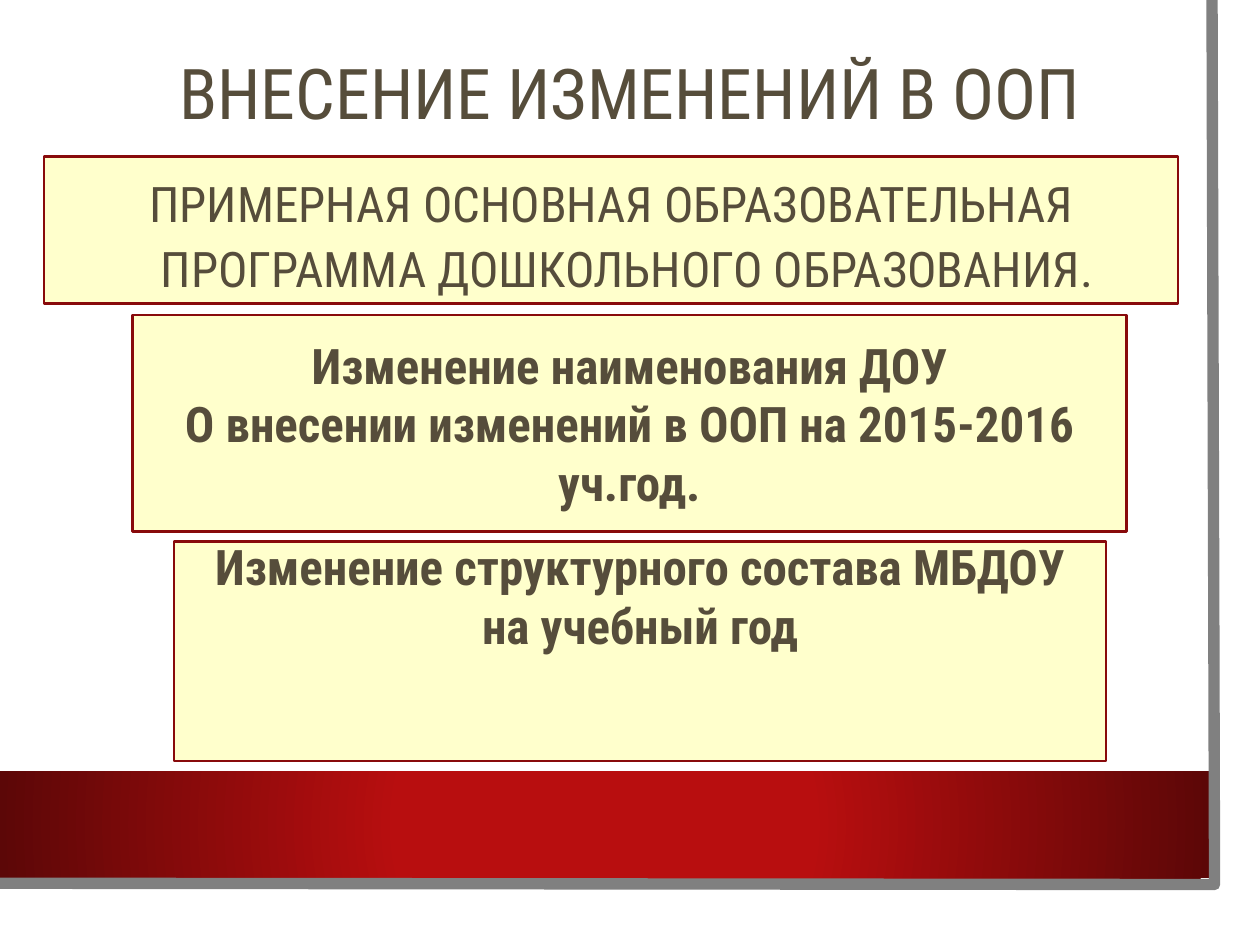
from lxml import etree
from pptx import Presentation
from pptx.dml.color import RGBColor
from pptx.enum.shapes import MSO_SHAPE
from pptx.enum.text import MSO_ANCHOR, PP_ALIGN
from pptx.oxml import parse_xml
from pptx.oxml.ns import nsdecls, qn
from pptx.util import Inches, Pt

RECTANGLE = MSO_SHAPE.RECTANGLE
MIDDLE, TOP = MSO_ANCHOR.MIDDLE, MSO_ANCHOR.TOP
CENTER = PP_ALIGN.CENTER

FONT = "Roboto Condensed"
WHITE = RGBColor(0xFF, 0xFF, 0xFF)
GRAY = RGBColor(0x80, 0x80, 0x80)
BROWN = RGBColor(0x56, 0x4D, 0x3B)
CREAM = RGBColor(0xFF, 0xFF, 0xCC)
DARK_RED = RGBColor(0x88, 0x0A, 0x0B)
BAND_STOPS = [(34, RGBColor(0xB8, 0x0E, 0x0F)), (100, RGBColor(0x5C, 0x07, 0x07))]

SHEET = (0, 0, 9.83, 7.27)
BAND = (0, 6.12, 9.6, 0.85)
EDGE = [(9.62, 0), (9.64, 7.02), (-0.02, 7.01)]

TITLE = {"box": (0.5, 0.29, 9, 0.95), "text": "ВНЕСЕНИЕ ИЗМЕНЕНИЙ В ООП",
         "size": 40, "spacing": 0.9}
PANELS = [
    {"box": (0.35, 1.24, 9, 1.17), "spacing": 1.1, "hanging": 0.25, "top": 0.09,
     "text": "ПРИМЕРНАЯ ОСНОВНАЯ ОБРАЗОВАТЕЛЬНАЯ ПРОГРАММА ДОШКОЛЬНОГО ОБРАЗОВАНИЯ."},
    {"box": (1.05, 2.5, 7.89, 1.72), "bold": True,
     "text": "Изменение наименования ДОУ\nО внесении изменений в ООП на 2015-2016 уч.год."},
    {"box": (1.38, 4.3, 7.4, 1.74), "bold": True, "anchor": TOP, "top": -0.04,
     "text": "Изменение структурного состава МБДОУ на учебный год"},
]


def add_rectangle(slide, box, fill=None, line=None):
    shape = slide.shapes.add_shape(RECTANGLE, *map(Inches, box))
    shape.shadow.inherit = False
    if fill is not None:
        shape.fill.solid()
        shape.fill.fore_color.rgb = fill
    if line is None:
        shape.line.fill.background()
    else:
        shape.line.color.rgb = line
        shape.line.width = Pt(1.5)
    return shape


def set_radial_fill(shape, stops):
    shape.fill.background()
    gradient = parse_xml(
        f'<a:gradFill {nsdecls("a")} rotWithShape="1"><a:gsLst/><a:path path="circle">'
        '<a:fillToRect l="50000" t="50000" r="50000" b="50000"/></a:path></a:gradFill>')
    for position, color in stops:
        stop = etree.SubElement(gradient[0], qn("a:gs"), pos=str(position * 1000))
        etree.SubElement(stop, qn("a:srgbClr"), val=str(color))
    properties = shape.element.spPr
    properties.replace(properties.find(qn("a:noFill")), gradient)


def add_edge(slide, points):
    start, *rest = [(Inches(x), Inches(y)) for x, y in points]
    builder = slide.shapes.build_freeform(*start)
    builder.add_line_segments(rest, close=False)
    edge = builder.convert_to_shape()
    edge.shadow.inherit = False
    edge.fill.background()
    edge.line.color.rgb = GRAY
    edge.line.width = Pt(6.5)


def write_text(shape, content):
    frame = shape.text_frame
    frame.text = content["text"]
    frame.word_wrap = True
    frame.vertical_anchor = content.get("anchor", MIDDLE)
    frame.margin_top = Inches(content.get("top", 0.05))
    for paragraph in frame.paragraphs:
        paragraph.alignment = CENTER
        paragraph.line_spacing = content.get("spacing", 1.0)
        if "hanging" in content:
            indent = Inches(content["hanging"])
            properties = paragraph._p.get_or_add_pPr()
            properties.set("marL", str(indent))
            properties.set("indent", str(-indent))
        for run in paragraph.runs:
            run.font.name = FONT
            run.font.size = Pt(content.get("size", 28))
            run.font.bold = content.get("bold", False)
            run.font.color.rgb = BROWN


def main():
    presentation = Presentation()
    presentation.slide_width = Inches(10)
    presentation.slide_height = Inches(7.5)
    slide = presentation.slides.add_slide(presentation.slide_layouts[6])

    add_rectangle(slide, SHEET, WHITE)
    set_radial_fill(add_rectangle(slide, BAND), BAND_STOPS)
    add_edge(slide, EDGE)
    write_text(slide.shapes.add_textbox(*map(Inches, TITLE["box"])), TITLE)
    for panel in PANELS:
        write_text(add_rectangle(slide, panel["box"], CREAM, DARK_RED), panel)

    presentation.save("out.pptx")


if __name__ == "__main__":
    main()
